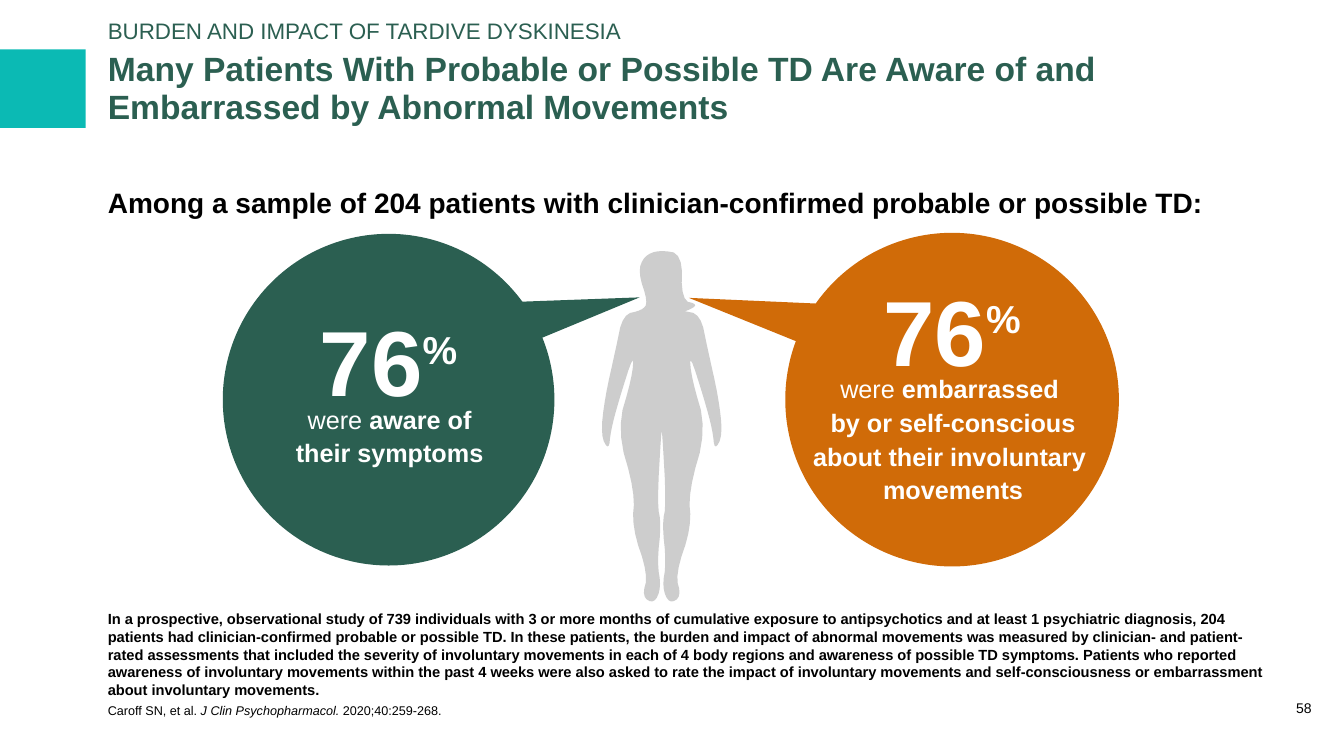
from math import cos, radians, sin

from pptx import Presentation
from pptx.dml.color import RGBColor
from pptx.enum.shapes import MSO_SHAPE
from pptx.enum.text import MSO_ANCHOR, MSO_AUTO_SIZE, PP_ALIGN
from pptx.util import Inches, Pt

TEAL = RGBColor(0x0B, 0xBA, 0xB4)
GREEN = RGBColor(0x2B, 0x5F, 0x51)
ORANGE = RGBColor(0xD0, 0x6B, 0x08)
GRAY = RGBColor(0xCD, 0xCD, 0xCD)
BLACK = RGBColor(0, 0, 0)
WHITE = RGBColor(0xFF, 0xFF, 0xFF)

# Square grid: ten columns or rows to the inch
COLUMNS, ROWS = 133.33, 75
MARGIN, TEXT_WIDTH = 10.7, 115.6
POINTER_ANGLE = 77.7

# Silhouette: the half body is mirrored across the width
FIGURE_WIDTH = 119
HEAD = [(84, 59), (96, 52), (79, 48), (80, 2), (57, -2), (42, 4), (36, 20), (46, 50)]
HALF_BODY = [
    (40, 58), (21, 62), (14, 96), (3, 145), (-1, 182), (7, 197),
    (9, 177), (17, 147), (32, 100), (30, 125), (15, 176),
    (33, 238), (30, 273), (46, 320), (40, 342), (52, 349),
    (59, 333), (55, 308), (59, 270), (55, 250), (59, 178),
]


def grid(cells):
    return Inches(cells / 10)


def apply_format(target, values):
    for name, value in values.items():
        setattr(target, name, value)


def paint(shape, color):
    shape.shadow.inherit = False
    shape.fill.solid()
    shape.fill.fore_color.rgb = color
    shape.line.fill.background()
    return shape


def add_block(slide, kind, box, color):
    return paint(slide.shapes.add_shape(kind, *map(grid, box)), color)


def add_text(slide, box, paragraphs, size, color, frame_format=None, padded=False, **spacing):
    """Each paragraph is a list of (text, font values); a newline breaks the line."""
    frame = slide.shapes.add_textbox(*map(grid, box)).text_frame
    frame.word_wrap = True
    if not padded:
        apply_format(frame, dict.fromkeys(
            ("margin_left", "margin_top", "margin_right", "margin_bottom"), 0))
    apply_format(frame, frame_format or {})
    for number, runs in enumerate(paragraphs):
        paragraph = frame.add_paragraph() if number else frame.paragraphs[0]
        apply_format(paragraph, spacing)
        for text, font_format in runs:
            for line_number, line in enumerate(text.split("\n")):
                if line_number:
                    paragraph.add_line_break()
                run = paragraph.add_run()
                run.text = line
                apply_format(run.font, {"name": "Arial", "size": Pt(size), **font_format})
                run.font.color.rgb = color
    return frame


def add_header(slide, left, top, width):
    add_block(slide, MSO_SHAPE.RECTANGLE, (0, top + 3.1, 8.5, 7.8), TEAL)
    middle = {"vertical_anchor": MSO_ANCHOR.MIDDLE}
    bold = {"bold": True}
    lines = [
        ("BURDEN AND IMPACT OF TARDIVE DYSKINESIA", 0, width, 2.8, 16, GREEN, {}, middle),
        ("Many Patients With Probable or Possible TD Are Aware of and "
         "Embarrassed by Abnormal Movements", 2.1, 98.6, 9.9, 24, GREEN, bold, middle),
        ("Among a sample of 204 patients with clinician-confirmed "
         "probable or possible TD:", 16.8, width, 3.9, 20, BLACK, bold, {}),
    ]
    for text, drop, line_width, height, size, color, font_format, frame_format in lines:
        add_text(slide, (left, top + drop, line_width, height), [[(text, font_format)]],
                 size, color, frame_format, line_spacing=0.95)


def round_corners(points):
    """Cut every corner at a quarter of its sides; the result is four times as large."""
    rounded = []
    for (x1, y1), (x2, y2) in zip(points, points[1:] + points[:1]):
        rounded += [(3 * x1 + x2, 3 * y1 + y2), (x1 + 3 * x2, y1 + 3 * y2)]
    return rounded


def add_figure(slide, left, top, width):
    mirrored = [(FIGURE_WIDTH - x, y) for x, y in reversed(HALF_BODY)]
    outline = round_corners(round_corners(HALF_BODY + mirrored + HEAD))
    builder = slide.shapes.build_freeform(
        *outline[0], scale=grid(width) / (FIGURE_WIDTH * 16))
    builder.add_line_segments(outline[1:], close=True)
    paint(builder.convert_to_shape(grid(left), grid(top)), GRAY)


def add_statistic(slide, left, top, diameter, color, side, tip, length, number_top, finding):
    """Circle with a pointer; side is 1 when the pointer goes right, -1 when left."""
    center = left + diameter / 2
    add_block(slide, MSO_SHAPE.OVAL, (left, top, diameter, diameter), color)

    # Caption and percentage
    add_text(slide, (left, top + number_top + 9.65, diameter + 0.2, 11.3),
             [[("were ", {}), (finding, {"bold": True})]], 18, WHITE,
             padded=True, alignment=PP_ALIGN.CENTER, line_spacing=Pt(24))
    number = add_text(
        slide, (center - 8.15, top + number_top, 16.3, 12.1),
        [[("76", {"bold": True}), ("%", {"bold": True, "size": Pt(48)})]], 66, WHITE,
        {"vertical_anchor": MSO_ANCHOR.MIDDLE, "word_wrap": False,
         "auto_size": MSO_AUTO_SIZE.SHAPE_TO_FIT_TEXT},
        padded=True, alignment=PP_ALIGN.CENTER)
    percent_sign = number.paragraphs[0].runs[1]
    percent_sign.font._element.set("baseline", "48000")

    # Pointer, centred half its length back from the tip
    angle = radians(POINTER_ANGLE)
    middle_x = tip[0] - side * sin(angle) * length / 2
    middle_y = tip[1] + cos(angle) * length / 2
    pointer = add_block(slide, MSO_SHAPE.ISOSCELES_TRIANGLE,
                        (middle_x - 2.25, middle_y - length / 2, 4.5, length), color)
    pointer.rotation = side * POINTER_ANGLE % 360


def add_footer(slide, left, top, width, height):
    study = ("In a prospective, observational study of 739 individuals with 3 or more months of "
             "cumulative exposure to antipsychotics and at least 1 psychiatric diagnosis, 204 "
             "patients had clinician-confirmed probable or possible TD. In these patients, the "
             "burden and impact of abnormal movements was measured by clinician- and "
             "patient-rated assessments that included the severity of involuntary movements in "
             "each of 4 body regions and awareness of possible TD symptoms. Patients who reported "
             "awareness of involuntary movements within the past 4 weeks were also asked to rate "
             "the impact of involuntary movements and self-consciousness or embarrassment about "
             "involuntary movements.")
    small = {"size": Pt(9)}
    bottom = {"vertical_anchor": MSO_ANCHOR.BOTTOM}
    notes = add_text(slide, (left, top, width, height), [
        [(study, {"bold": True})],
        [("Caroff SN, et al. ", small),
         ("J Clin Psychopharmacol. ", {**small, "italic": True}),
         ("2020;40:259-268.", small)],
    ], 10.5, BLACK, bottom)
    notes.paragraphs[0].space_after = Pt(3)
    # Slide number
    add_text(slide, (left + width + 1.4, top + 1.2, 3.3, 4.3), [[("58", {})]],
             10, BLACK, bottom, alignment=PP_ALIGN.CENTER, line_spacing=0.95)


def main():
    presentation = Presentation()
    presentation.slide_width, presentation.slide_height = grid(COLUMNS), grid(ROWS)
    slide = presentation.slides.add_slide(presentation.slide_layouts[6])

    add_header(slide, MARGIN, 1.8, TEXT_WIDTH)
    add_figure(slide, 59.7, 25, 11.9)
    add_statistic(slide, 22.1, 23.2, 32.9, GREEN, 1, (63.45, 29.5), 12.5, 6.4,
                  "aware of\ntheir symptoms")
    add_statistic(slide, 77.9, 23.1, 33.1, ORANGE, -1, (68.35, 29.55), 13.1, 3.5,
                  "embarrassed \nby or self-conscious\nabout their involuntary \nmovements")
    add_footer(slide, MARGIN, 65.6, TEXT_WIDTH, 5.6)

    presentation.save("out.pptx")


if __name__ == "__main__":
    main()
